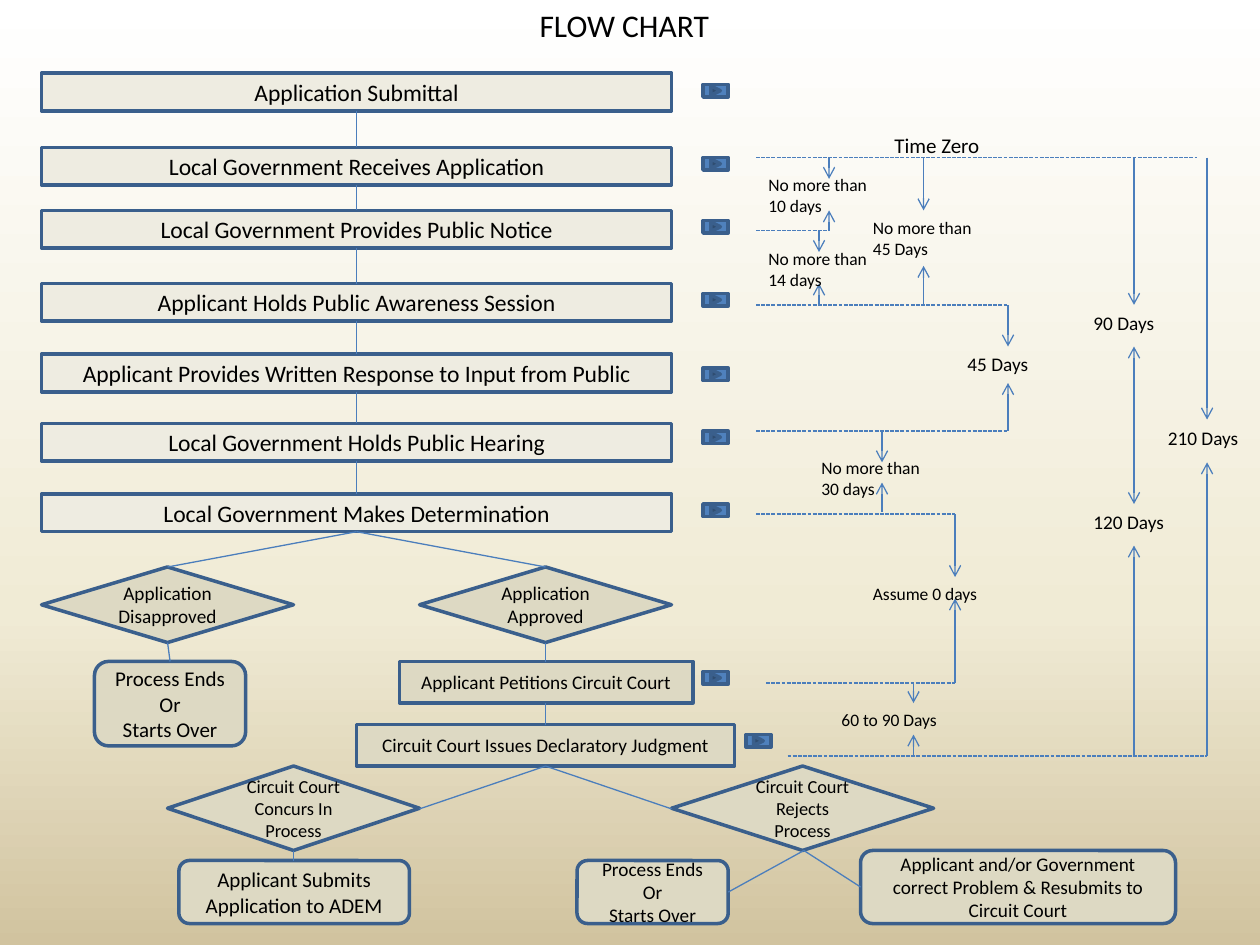
from copy import deepcopy
from pptx import Presentation
from pptx.dml.color import RGBColor
from pptx.enum.dml import MSO_LINE
from pptx.enum.shapes import MSO_CONNECTOR, MSO_SHAPE
from pptx.enum.text import MSO_ANCHOR, MSO_AUTO_SIZE, PP_ALIGN
from pptx.oxml.ns import qn
from pptx.util import Inches, Pt
from lxml import etree

RECT = MSO_SHAPE.RECTANGLE
ROUND = MSO_SHAPE.FLOWCHART_ALTERNATE_PROCESS
DIAMOND = MSO_SHAPE.FLOWCHART_DECISION
NEXT = MSO_SHAPE.ACTION_BUTTON_FORWARD_OR_NEXT
STRAIGHT = MSO_CONNECTOR.STRAIGHT
DASH = MSO_LINE.SQUARE_DOT
CENTER, LEFT = PP_ALIGN.CENTER, PP_ALIGN.LEFT
MIDDLE = MSO_ANCHOR.MIDDLE
FIT, FIXED = MSO_AUTO_SIZE.SHAPE_TO_FIT_TEXT, MSO_AUTO_SIZE.NONE

COLORS = {"step": "EEECE1", "node": "DDD9C3", "icon": "4F81BD",
          "edge": "3A5F8C", "line": "4B7EBC", "text": "000000"}
BACK = [(0, "FFFFFF"), (0.65, "F0EBD5"), (1, "D1C39F")]


class Chart:
    """Draws on a grid of 120 columns by 90 rows, twelve to the inch."""
    font = "Calibri"

    def __init__(self, deck):
        self.slide = deck.slides.add_slide(deck.slide_layouts[5])
        self.items = self.slide.shapes

    def grid(self, *cells):
        return [Inches(round(c / 12, 2)) for c in cells]

    def color(self, name):
        return RGBColor.from_string(COLORS[name])

    def back(self, stops):
        fill = self.slide.background.fill
        fill.gradient()
        fill.gradient_angle = 270
        base = self.slide.element.find(".//" + qn("a:gsLst"))
        base.insert(1, deepcopy(base[0]))
        for stop, (pos, rgb) in zip(fill.gradient_stops, stops):
            stop.position = pos
            stop.color.rgb = RGBColor.from_string(rgb)

    def words(self, shape, text, size, align=CENTER):
        frame = shape.text_frame
        frame.text = text
        frame.word_wrap = True
        for par in frame.paragraphs:
            par.alignment = align
            for run in par.runs:
                run.font.size = Pt(size)
                run.font.name = self.font
                run.font.color.rgb = self.color("text")
        return frame

    def title(self, text, size, *cells):
        shape = self.items.title
        shape.left, shape.top, shape.width, shape.height = self.grid(*cells)
        frame = self.words(shape, text, size)
        frame.auto_size = FIXED
        frame.vertical_anchor = MIDDLE

    def box(self, kind, fill, cells, text="", size=11):
        shape = self.items.add_shape(kind, *self.grid(*cells))
        shape.shadow.inherit = False
        shape.fill.solid()
        shape.fill.fore_color.rgb = self.color(fill)
        shape.line.color.rgb = self.color("edge")
        shape.line.width = Pt(2)
        if text:
            self.words(shape, text, size).vertical_anchor = MIDDLE

    def icon(self, col, row):
        self.box(NEXT, "icon", (col, row, 2.4, 1.2))

    def label(self, text, size, *cells):
        shape = self.items.add_textbox(*self.grid(*cells))
        self.words(shape, text, size, LEFT).auto_size = FIT

    def line(self, *ends, dash=False, heads=()):
        link = self.items.add_connector(STRAIGHT, *self.grid(*ends))
        link.line.color.rgb = self.color("line")
        link.line.width = Pt(0.75)
        if dash:
            link.line.dash_style = DASH
        props = link.element.spPr
        for end in heads:
            etree.SubElement(props.find(qn("a:ln")), qn(f"a:{end}"), type="arrow")
        etree.SubElement(props, qn("a:effectLst"))

    def arrow(self, col, start, stop, heads=("tailEnd",)):
        self.line(col, start, col, stop, heads=heads)


def main():
    deck = Presentation()
    deck.slide_width, deck.slide_height = Inches(10), Inches(7.5)
    art = Chart(deck)
    art.back(BACK)
    art.title("FLOW CHART", 18, 49, 0, 21, 4.8)

    # Main steps and the links between them
    steps = [(7, "Application Submittal"),
             (14, "Local Government Receives Application"),
             (20, "Local Government Provides Public Notice"),
             (27, "Applicant Holds Public Awareness Session"),
             (33.7, "Applicant Provides Written Response to Input from Public"),
             (40.3, "Local Government Holds Public Hearing"),
             (47, "Local Government Makes Determination")]
    high = 3.6
    for row, text in steps:
        art.box(RECT, "step", (4, row, 60, high), text, 13.5)
    for (row, _), (below, _) in zip(steps, steps[1:]):
        art.line(34, row + high, 34, below)

    # Outcomes and court stages
    ends = "Process Ends\nOr\nStarts Over"
    nodes = [
        (ROUND, (9, 63, 14.4, 8), ends, 12),
        (DIAMOND, (4, 54, 24, 7.2), "Application Disapproved", 11),
        (DIAMOND, (40, 54, 24, 7.2), "Application Approved", 11),
        (RECT, (38, 63, 28, 4), "Applicant Petitions Circuit Court", 11),
        (RECT, (34, 69, 36, 4), "Circuit Court Issues Declaratory Judgment", 11),
        (DIAMOND, (16, 73, 24, 8), "Circuit Court Concurs In Process", 10.5),
        (DIAMOND, (64, 73, 25, 8), "Circuit Court Rejects Process", 10.5),
        (ROUND, (17, 82, 22, 6), "Applicant Submits Application to ADEM", 12),
        (ROUND, (55, 82, 14.4, 6), ends, 11),
        (ROUND, (82, 81, 30, 7),
         "Applicant and/or Government correct Problem & Resubmits to Circuit Court", 11)]
    for kind, cells, text, size in nodes:
        art.box(kind, "node", cells, text, size)
    for link in [(34, 50.6, 16, 54), (34, 50.6, 52, 54), (16, 61.2, 16.2, 63),
                 (52, 61.2, 52, 63), (52, 67, 52, 69), (52, 73, 40, 77),
                 (52, 73, 64, 77), (28, 81, 28, 82), (76.5, 81, 69.4, 85),
                 (76.5, 81, 82, 84.5)]:
        art.line(*link)

    # Step icons
    for row in (8, 15, 21, 28, 35, 41, 48, 64):
        art.icon(67, row)
    art.icon(71, 70)

    # Dashed time marks: left, right, row
    for left, right, row in [(72, 114, 15), (72, 79, 22), (72, 96, 29), (72, 96, 41),
                             (72, 91, 49), (73, 91, 65), (75, 115, 72)]:
        art.line(left, row, right, row, dash=True)

    # Time spans: column, start, stop
    for span in [(79, 15, 17), (79, 22, 20), (78, 22, 24), (78, 29, 27),
                 (88, 15, 20), (88, 29, 25.3), (96, 29, 33), (96, 41, 36.5),
                 (84, 41, 44), (84, 48.7, 46), (91, 49, 55), (91, 65, 57),
                 (87, 65, 67), (87, 72, 70), (108, 15, 29), (108, 72, 52),
                 (115, 15, 40), (115, 72, 44)]:
        art.arrow(*span)
    art.arrow(108, 33, 48, ("headEnd", "tailEnd"))

    # Time labels
    for text, size, *cells in [
            ("Time Zero", 12, 84, 12, 12, 3.6),
            ("No more than 10 days", 10, 72, 16, 12, 5.4),
            ("No more than 14 days", 10, 72, 23, 12, 5.4),
            ("No more than 45 Days", 10, 82, 20, 12, 5.4),
            ("No more than 30 days", 10, 77, 43, 12, 5.4),
            ("Assume 0 days", 10, 82, 55, 14, 3.2),
            ("60 to 90 Days", 10, 79, 67, 12, 3.2),
            ("45 Days", 11, 91, 33, 10, 3.5),
            ("90 Days", 11, 103, 29, 10, 3.5),
            ("120 Days", 11, 103, 48, 10, 3.5),
            ("210 Days", 11, 110, 40, 10, 3.5)]:
        art.label(text, size, *cells)

    deck.save("out.pptx")


if __name__ == "__main__":
    main()
